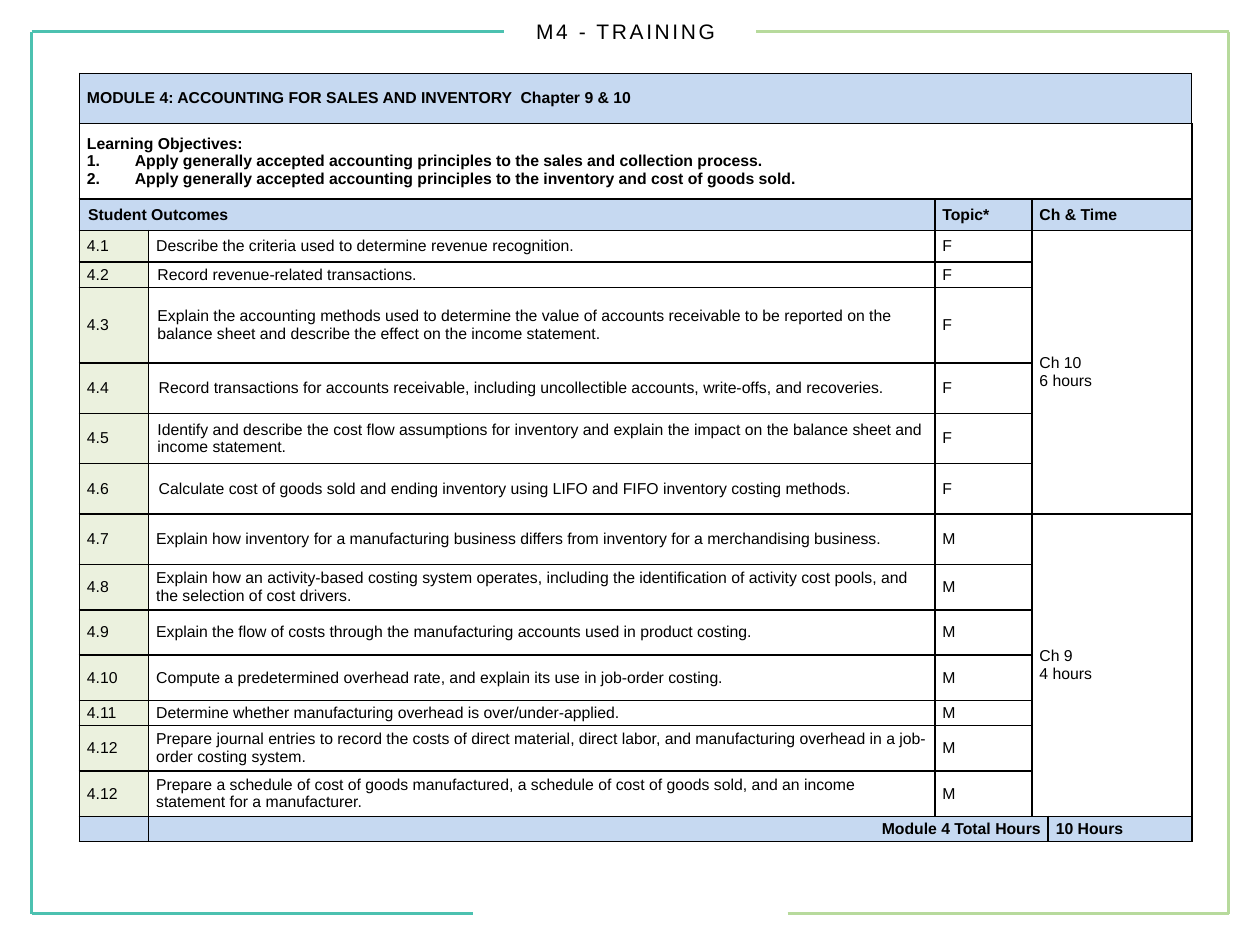
"""Build the Module 4 training slide with its table of student outcomes."""
from lxml.etree import SubElement
from pptx import Presentation
from pptx.dml.color import RGBColor
from pptx.enum.shapes import MSO_CONNECTOR
from pptx.enum.text import MSO_ANCHOR, PP_ALIGN
from pptx.oxml.ns import qn
from pptx.util import Inches, Pt

C = {"teal": "4CC1B0", "lime": "B7DA9C", "blue": "C6D9F1",
     "green": "EBF1DE", "white": "FFFFFF", "black": "000000"}
FONT = "Arial"


def border(tc, side, width):
    ln = SubElement(tc.get_or_add_tcPr(), qn(f"a:ln{side}"), w=str(Pt(width)))
    SubElement(SubElement(ln, qn("a:solidFill")), qn("a:srgbClr"), val=C["black"])


def write(p, text, size=9, bold=False, indent=0):
    if indent:
        p._p.get_or_add_pPr().set("marL", str(Inches(indent)))
    for i, line in enumerate(text.split("\n")):
        if i:
            p.add_line_break()
        r = p.add_run()
        r.text = line
        r.font.name, r.font.size, r.font.bold = FONT, Pt(size), bold
        r.font.color.rgb = RGBColor.from_string(C["black"])
    return r


prs = Presentation()
prs.slide_width, prs.slide_height = Inches(10), Inches(7.5)
s = prs.slides.add_slide(prs.slide_layouts[6])
unit = prs.slide_width // 40

frame = [("teal", 1, 1, 1, 29), ("lime", 39, 1, 39, 29),
         ("teal", 1, 29, 15, 29), ("lime", 25, 29, 39, 29),
         ("teal", 1, 1, 16, 1), ("lime", 24, 1, 39, 1)]
for color, *ends in frame:
    ln = s.shapes.add_connector(MSO_CONNECTOR.STRAIGHT, *(n * unit for n in ends))
    ln.line.color.rgb = RGBColor.from_string(C[color])
    ln.line.width = Pt(2.25)
    SubElement(ln._element.spPr, qn("a:effectLst"))

tf = s.shapes.add_textbox(0, 0, prs.slide_width, 2 * unit).text_frame
tf.word_wrap = True
tf.vertical_anchor = MSO_ANCHOR.MIDDLE
tf.paragraphs[0].alignment = PP_ALIGN.CENTER
r = write(tf.paragraphs[0], "M4 - TRAINING ", size=12)
r._r.get_or_add_rPr().set("spc", "150")

objectives = [
    "Apply generally accepted accounting principles to the sales and collection process.",
    "Apply generally accepted accounting principles to the inventory and cost of goods sold.",
]
outcomes = [
    ("4.1", 0.25, "F", 0, "Describe the criteria used to determine revenue recognition."),
    ("4.2", 0.2, "F", 0.01, "Record revenue-related transactions."),
    ("4.3", 0.6, "F", 0.01, "Explain the accounting methods used to determine the value of accounts "
     "receivable to be reported on the balance sheet and describe the effect on the income statement."),
    ("4.4", 0.4, "F", 0.02, "Record transactions for accounts receivable, including uncollectible "
     "accounts, write-offs, and recoveries."),
    ("4.5", 0.4, "F", 0.01, "Identify and describe the cost flow assumptions for inventory and explain "
     "the impact on the balance sheet and income statement."),
    ("4.6", 0.4, "F", 0.02, "Calculate cost of goods sold and ending inventory using LIFO and FIFO "
     "inventory costing methods."),
    ("4.7", 0.4, "M", 0, "Explain how inventory for a manufacturing business differs from inventory "
     "for a merchandising business."),
    ("4.8", 0.36, "M", 0, "Explain how an activity-based costing system operates, including the "
     "identification of activity cost pools, and the selection of cost drivers."),
    ("4.9", 0.36, "M", 0, "Explain the flow of costs through the manufacturing accounts used in "
     "product costing."),
    ("4.10", 0.36, "M", 0, "Compute a predetermined overhead rate, and explain its use in job-order "
     "costing."),
    ("4.11", 0.2, "M", 0, "Determine whether manufacturing overhead is over/under-applied."),
    ("4.12", 0.36, "M", 0, "Prepare journal entries to record the costs of direct material, direct "
     "labor, and manufacturing overhead in a job-order costing system."),
    ("4.12", 0.36, "M", 0, "Prepare a schedule of cost of goods manufactured, a schedule of cost of "
     "goods sold, and an income statement for a manufacturer."),
]
cols = [0.55, 6.24, 0.77, 0.13, 1.14]
rows = [0.4, 0.6, 0.25] + [o[1] for o in outcomes] + [0.2]
last = len(rows) - 1
tbl = s.shapes.add_table(len(rows), len(cols), Inches(0.63), Inches(0.58),
                         Inches(sum(cols)), Inches(sum(rows))).table
tbl.first_row = tbl.horz_banding = False
for col, width in zip(tbl.columns, cols):
    col.width = Inches(width)

for i, height in enumerate(rows):
    tbl.rows[i].height = Inches(height)
    for j in range(len(cols)):
        cell = tbl.cell(i, j)
        cell.margin_left = cell.margin_right = Inches(0.06)
        cell.margin_top = cell.margin_bottom = 0
        cell.vertical_anchor = MSO_ANCHOR.MIDDLE
        for side in "LRTB":
            thin = i == 0 or (i == 1 and side == "T")
            border(cell._tc, side, 0.5 if thin else 1)
        shade = "blue" if i in (0, 2, last) else "green" if i > 2 and j == 0 else "white"
        cell.fill.solid()
        cell.fill.fore_color.rgb = RGBColor.from_string(C[shade])
        SubElement(cell.text_frame.paragraphs[0]._p, qn("a:endParaRPr"), sz="900")

spans = [(0, 0, 0, 4), (1, 0, 1, 4), (2, 0, 2, 1), (2, 3, 2, 4),
         (3, 3, 8, 4), (9, 3, 15, 4), (last, 1, last, 3)]
for top, left, bottom, right in spans:
    tbl.cell(top, left).merge(tbl.cell(bottom, right))

texts = [
    (0, 0, "MODULE 4: ACCOUNTING FOR SALES AND INVENTORY  Chapter 9 & 10", True, 0),
    (1, 0, "Learning Objectives:", True, 0),
    (2, 0, "Student Outcomes", True, 0.01),
    (2, 2, "Topic*", True, 0),
    (2, 3, "Ch & Time", True, 0),
    (3, 3, "Ch 10", False, 0),
    (9, 3, "Ch 9\n4 hours", False, 0),
    (last, 1, "Module 4 Total Hours", True, 0),
    (last, 4, "10 Hours", True, 0),
]
for i, (number, _, topic, indent, outcome) in enumerate(outcomes, 3):
    texts += [(i, 0, number, False, 0), (i, 1, outcome, False, indent), (i, 2, topic, False, 0)]
for i, j, text, bold, indent in texts:
    write(tbl.cell(i, j).text_frame.paragraphs[0], text, bold=bold, indent=indent)

tbl.cell(last, 1).text_frame.paragraphs[0].alignment = PP_ALIGN.RIGHT
write(tbl.cell(3, 3).text_frame.add_paragraph(), "6 hours")
for objective in objectives:
    p = tbl.cell(1, 0).text_frame.add_paragraph()
    pPr = p._p.get_or_add_pPr()
    pPr.set("indent", str(-Inches(0.38)))
    SubElement(pPr, qn("a:buFont"), typeface=FONT)
    SubElement(pPr, qn("a:buAutoNum"), type="arabicPeriod")
    write(p, objective, bold=True, indent=0.38)

prs.save("out.pptx")
